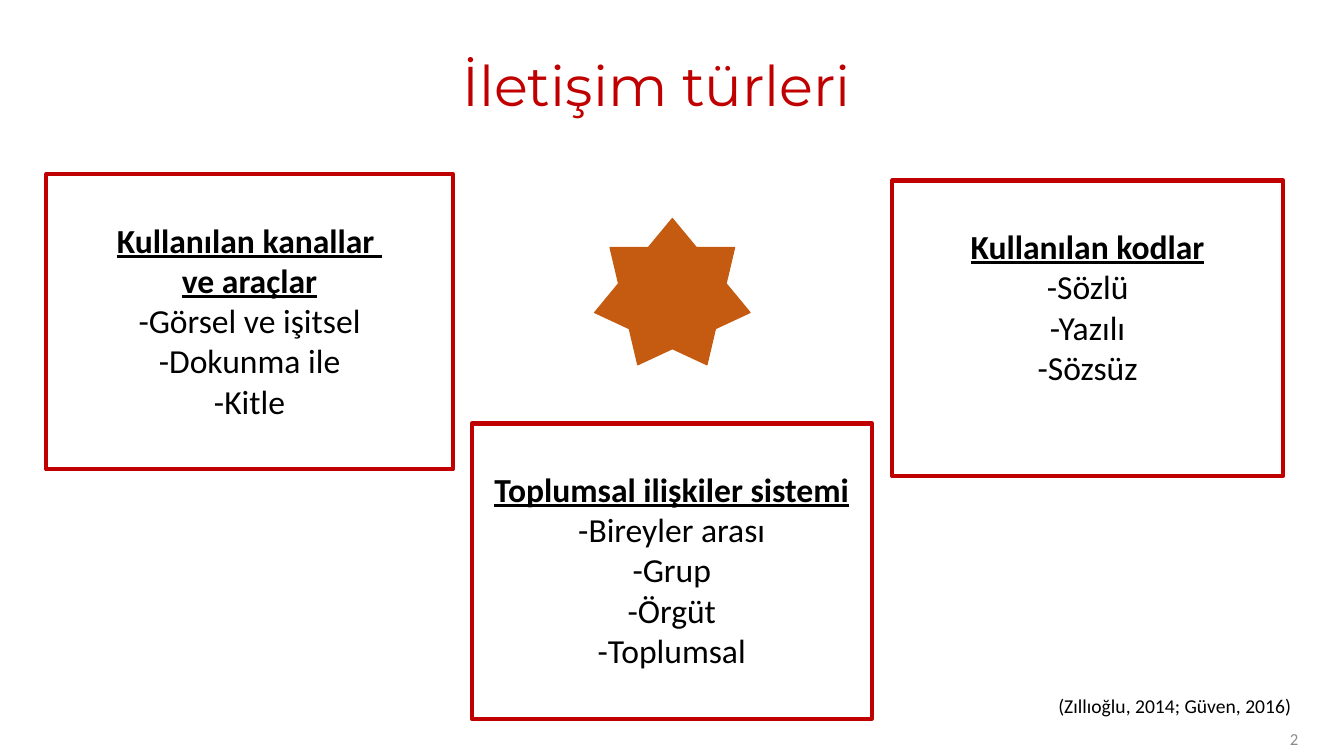
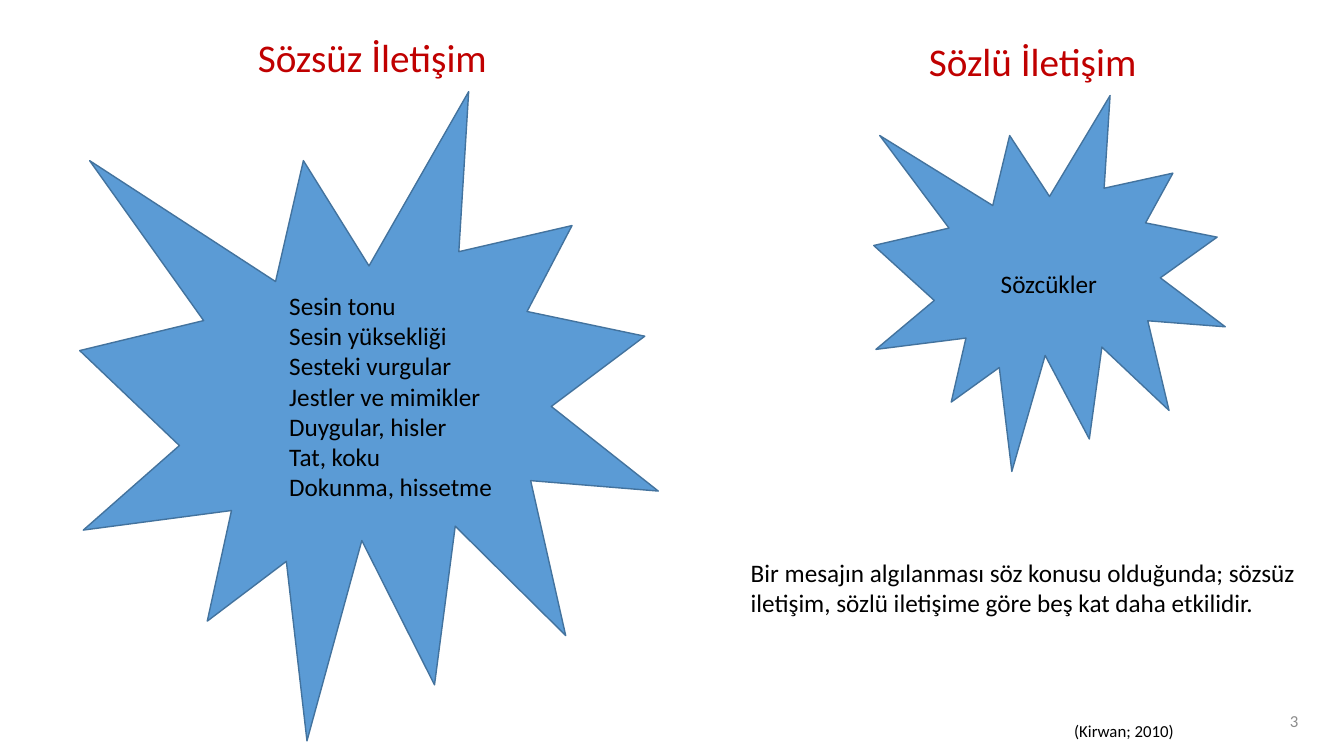
from pptx import Presentation
from pptx.dml.color import RGBColor
from pptx.enum.shapes import MSO_SHAPE
from pptx.enum.text import MSO_ANCHOR, PP_ALIGN
from pptx.util import Cm, Pt

RED = RGBColor(0xC0, 0x00, 0x00)
BLACK = RGBColor(0x00, 0x00, 0x00)
GRAY = RGBColor(0x8C, 0x8C, 0x8C)
RUST = RGBColor(0xC5, 0x5A, 0x11)
BLUE = RGBColor(0x5B, 0x9B, 0xD5)
NAVY = RGBColor(0x43, 0x73, 0x9E)

CARD_H = 7.44
CARDS = [
    (1.17, 4.39, 10.24, ["Kullanılan kanallar ", "ve araçlar"],
     ["-Görsel ve işitsel", "-Dokunma ile", "-Kitle"]),
    (11.89, 10.67, 10.08, ["Toplumsal ilişkiler sistemi"],
     ["-Bireyler arası", "-Grup", "-Örgüt", "-Toplumsal"]),
    (22.48, 4.55, 9.86, ["Kullanılan kodlar"],
     ["-Sözlü", "-Yazılı", "-Sözsüz"]),
]
CUES = ["Sesin tonu", "Sesin yüksekliği", "Sesteki vurgular",
        "Jestler ve mimikler", "Duygular, hisler", "Tat, koku",
        "Dokunma, hissetme"]


def write(frame, lines, size=18, color=BLACK, font="Calibri",
          align=PP_ALIGN.LEFT, anchor=MSO_ANCHOR.TOP, heads=0, space=1.0):
    """Fill a frame, one paragraph a line; the first `heads` lines are headings."""
    frame.word_wrap = True
    frame.vertical_anchor = anchor
    for i, line in enumerate(lines):
        para = frame.paragraphs[0] if i == 0 else frame.add_paragraph()
        para.alignment = align
        para.line_spacing = space
        run = para.add_run()
        run.text = line
        run.font.name = font
        run.font.size = Pt(size)
        run.font.color.rgb = color
        run.font.bold = run.font.underline = i < heads


def label(slide, box, *lines, **style):
    text = slide.shapes.add_textbox(*map(Cm, box))
    write(text.text_frame, lines, **style)


def shape(slide, kind, box, line, fill=None, width=1):
    item = slide.shapes.add_shape(kind, *map(Cm, box))
    item.shadow.inherit = False
    if fill is None:
        item.fill.background()
    else:
        item.fill.solid()
        item.fill.fore_color.rgb = fill
    item.line.color.rgb = line
    item.line.width = Pt(width)
    return item


def card(slide, box, heads, items):
    """Place a red frame with underlined headings above a centred list."""
    frame = shape(slide, MSO_SHAPE.RECTANGLE, box, RED, width=3).text_frame
    frame.margin_top = Cm(1.14)
    write(frame, heads + items, size=24, align=PP_ALIGN.CENTER,
          heads=len(heads))


def burst(slide, box, title, title_x, lines, text_x, text_y):
    """Place a burst with its title above and its text inside."""
    left, top, width, height = box
    label(slide, (left + title_x, top - 1.6, 8, 1.45), title,
          size=28, color=RED)
    shape(slide, MSO_SHAPE.EXPLOSION1, box, NAVY, BLUE)
    label(slide, (left + text_x, top + text_y, width / 2, height / 3), *lines)


def footer(slide, number, top, source, box, size):
    label(slide, box, source, size=size)
    label(slide, (25.35, top, 7.62, 0.8), number, size=12, color=GRAY,
          align=PP_ALIGN.RIGHT, anchor=MSO_ANCHOR.MIDDLE)


def types(slide):
    label(slide, (11.4, 0.38, 12.12, 3.68), "İletişim türleri", size=40,
          color=RED, font="Montserrat", anchor=MSO_ANCHOR.MIDDLE, space=0.9)
    for left, top, width, heads, items in CARDS:
        card(slide, (left, top, width, CARD_H), heads, items)
    shape(slide, MSO_SHAPE.STAR_7_POINT, (14.99, 5.51, 3.91, 3.68),
          RUST, RUST)
    footer(slide, "2", 18.23, "(Zıllıoğlu, 2014; Güven, 2016)",
           (26.42, 17.35, 7.2, 0.86), 14)


def modes(slide):
    burst(slide, (22.02, 2.41, 8.86, 9.47), "Sözlü İletişim", 1.14,
          ["Sözcükler"], 2.95, 4.22)
    burst(slide, (2.01, 2.31, 14.58, 16.36), "Sözsüz İletişim", 4.24,
          CUES, 5.03, 4.88)
    label(slide, (18.67, 13.92, 14.81, 1.8),
          "Bir mesajın algılanması söz konusu olduğunda; sözsüz iletişim, "
          "sözlü iletişime göre beş kat daha etkilidir.")
    footer(slide, "3", 17.76, "(Kirwan; 2010)", (26.82, 18.03, 6.8, 0.76), 12)


def main():
    deck = Presentation()
    deck.slide_width, deck.slide_height = Cm(33.87), Cm(19.05)
    for build in (types, modes):
        build(deck.slides.add_slide(deck.slide_layouts[6]))
    deck.save("out.pptx")


if __name__ == "__main__":
    main()
